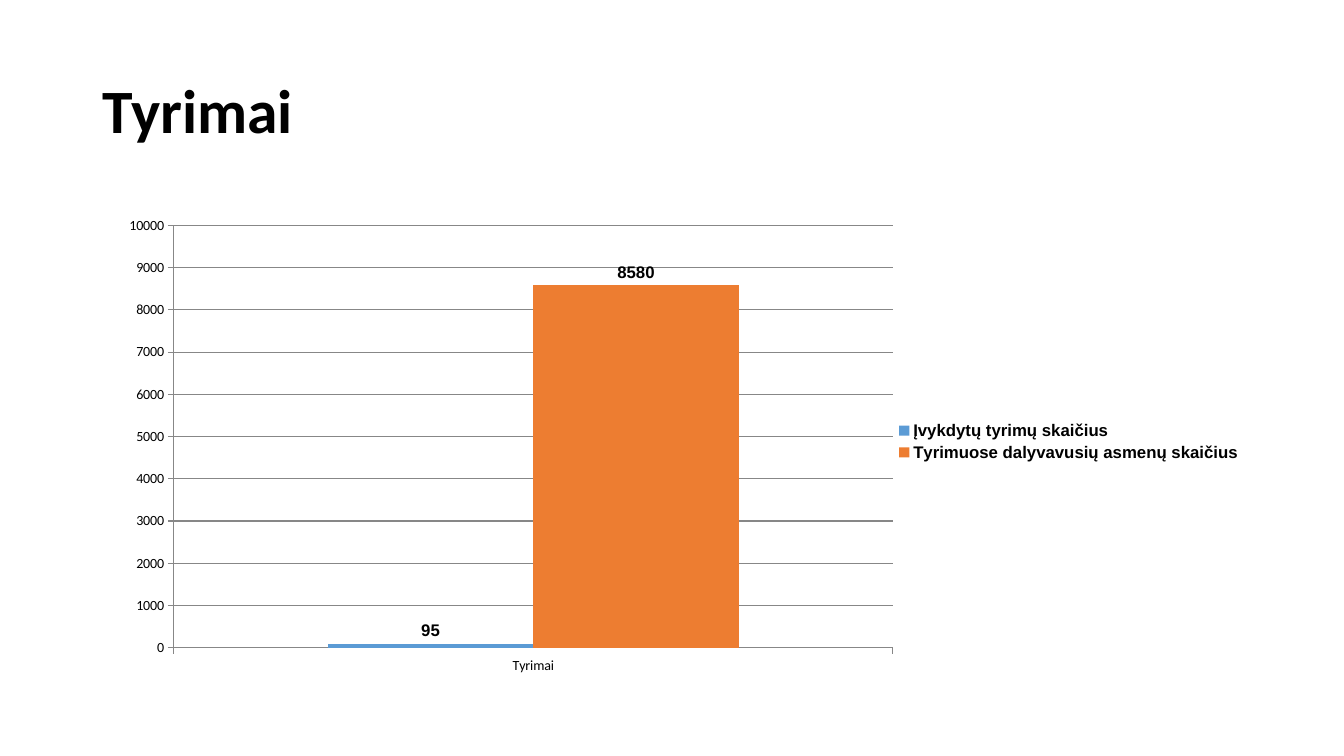
"""Build the Tyrimai slide: a heading above a clustered column chart."""
from lxml import etree
from pptx import Presentation
from pptx.chart.data import CategoryChartData
from pptx.dml.color import RGBColor
from pptx.enum.chart import XL_CHART_TYPE, XL_LABEL_POSITION, XL_LEGEND_POSITION, XL_TICK_MARK
from pptx.enum.text import MSO_ANCHOR
from pptx.util import Inches, Pt

COLUMNS = XL_CHART_TYPE.COLUMN_CLUSTERED
ABOVE_COLUMN = XL_LABEL_POSITION.OUTSIDE_END
LEGEND_RIGHT = XL_LEGEND_POSITION.RIGHT
TICK_OUT = XL_TICK_MARK.OUTSIDE
MIDDLE = MSO_ANCHOR.MIDDLE

BLACK = RGBColor(0x00, 0x00, 0x00)
GREY = RGBColor(0x87, 0x87, 0x87)
BLUE = RGBColor(0x5B, 0x9B, 0xD5)
ORANGE = RGBColor(0xED, 0x7D, 0x31)

HEADING = "Tyrimai"
CATEGORIES = ["Tyrimai"]
COUNTS = [
    ("Įvykdytų tyrimų skaičius", 95, BLUE),
    ("Tyrimuose dalyvavusių asmenų skaičius", 8580, ORANGE),
]
PLOT_AREA = {"x": 0.07, "y": 0.05, "w": 0.62, "h": 0.88}
LEFT, WIDTH = Inches(0.92), Inches(11.5)


def set_font(font, name, size, bold):
    font.name = name
    font.size = Pt(size)
    font.bold = bold
    font.color.rgb = BLACK


def add_heading(slide):
    heading = slide.shapes.add_textbox(LEFT, Inches(0.4), WIDTH, Inches(1.45))
    frame = heading.text_frame
    frame.word_wrap = True
    frame.vertical_anchor = MIDDLE
    paragraph = frame.paragraphs[0]
    paragraph.text = HEADING
    paragraph.line_spacing = 0.9
    set_font(paragraph.font, "Calibri", 44, True)


def place_plot(chart):
    plot_area = chart.plots[0]._element.getparent()
    namespace = etree.QName(plot_area).namespace
    for old_layout in plot_area.findall(f"{{{namespace}}}layout"):
        plot_area.remove(old_layout)
    layout = etree.Element(f"{{{namespace}}}layout")
    manual = etree.SubElement(layout, f"{{{namespace}}}manualLayout")
    settings = {"layoutTarget": "inner", "xMode": "edge", "yMode": "edge", **PLOT_AREA}
    for tag, value in settings.items():
        etree.SubElement(manual, f"{{{namespace}}}{tag}", val=str(value))
    plot_area.insert(0, layout)


def add_counts_chart(slide):
    data = CategoryChartData()
    data.categories = CATEGORIES
    for name, count, _ in COUNTS:
        data.add_series(name, [count])
    chart = slide.shapes.add_chart(COLUMNS, LEFT, Inches(2), WIDTH, Inches(4.76), data).chart
    chart.has_title = False
    set_font(chart.font, "Calibri", 10, False)

    chart.has_legend = True
    chart.legend.position = LEGEND_RIGHT
    chart.legend.include_in_layout = False
    set_font(chart.legend.font, "Arial", 12, True)

    for axis in (chart.category_axis, chart.value_axis):
        axis.major_tick_mark = TICK_OUT
        axis.format.line.color.rgb = GREY
    scale = chart.value_axis
    scale.minimum_scale, scale.maximum_scale, scale.major_unit = 0, 10000, 1000
    scale.major_gridlines.format.line.color.rgb = GREY

    plot = chart.plots[0]
    plot.gap_width = 150
    plot.overlap = 0
    plot.vary_by_categories = False
    for series, (_, _, colour) in zip(plot.series, COUNTS):
        series.format.fill.solid()
        series.format.fill.fore_color.rgb = colour
        labels = series.data_labels
        labels.show_value = True
        labels.position = ABOVE_COLUMN
        set_font(labels.font, "Arial", 12, True)
    place_plot(chart)


def main():
    presentation = Presentation()
    presentation.slide_width = Inches(13.33)
    presentation.slide_height = Inches(7.5)
    slide = presentation.slides.add_slide(presentation.slide_layouts[6])
    add_heading(slide)
    add_counts_chart(slide)
    presentation.save("out.pptx")


if __name__ == "__main__":
    main()
